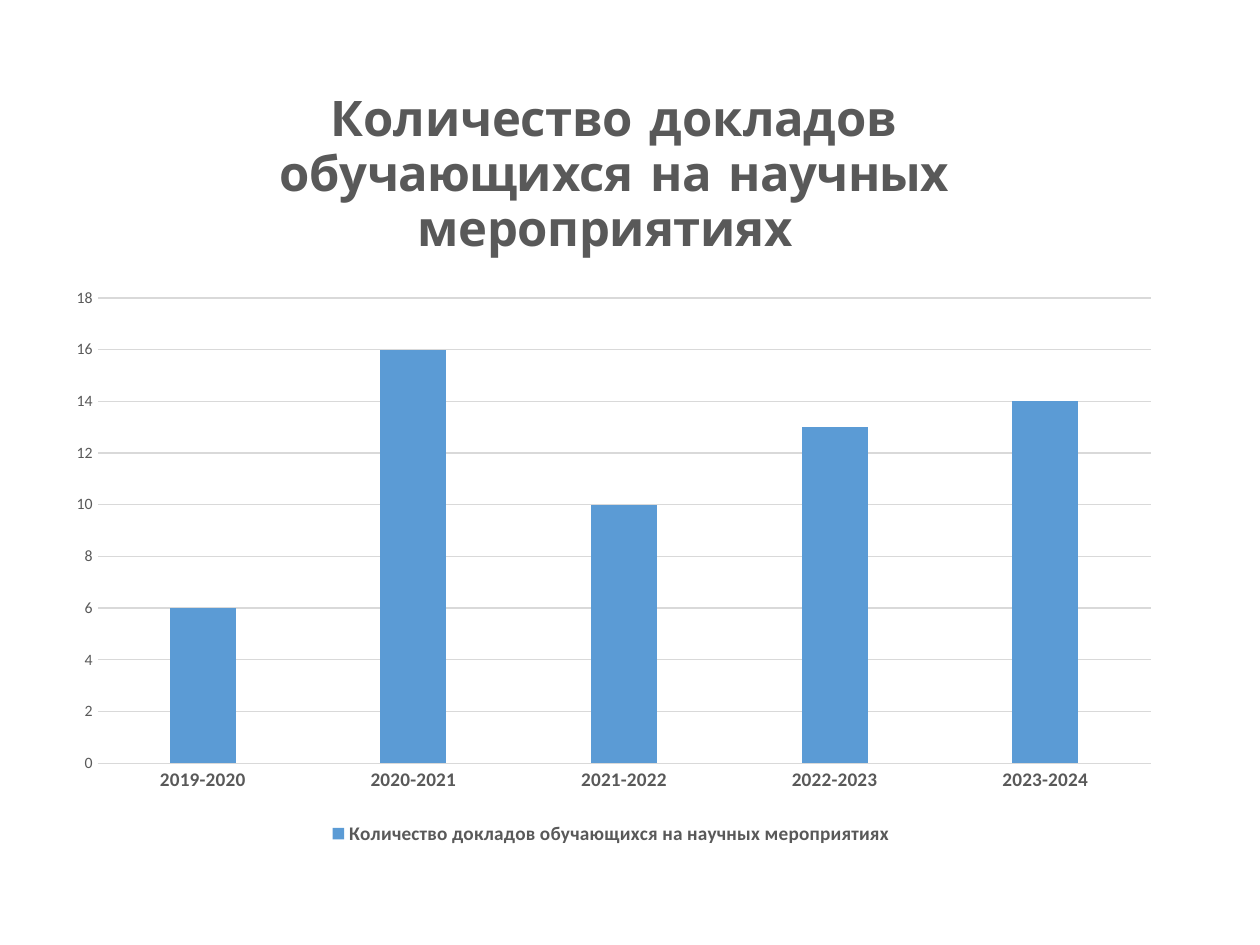
from pptx import Presentation
from pptx.chart.data import CategoryChartData
from pptx.dml.color import RGBColor
from pptx.enum.chart import XL_CHART_TYPE, XL_LEGEND_POSITION, XL_TICK_MARK
from pptx.util import Inches, Pt

COLORS = {"text": "595959", "grid": "D9D9D9", "bar": "5B9BD5", "base": "000000"}
HEADING = "Количество докладов обучающихся на научных мероприятиях "
REPORTS = {
    "2019-2020": 6,
    "2020-2021": 16,
    "2021-2022": 10,
    "2022-2023": 13,
    "2023-2024": 14,
}


def color(name):
    """Return the palette colour with the given name."""
    return RGBColor.from_string(COLORS[name])


def style_font(font, size, bold=False, face="Calibri", tone="text"):
    """Set the face, size, weight and colour of a font."""
    font.name = face
    font.size = Pt(size)
    font.bold = bold
    font.color.rgb = color(tone)


def style_line(line):
    """Make a line thin and light grey."""
    line.color.rgb = color("grid")
    line.width = Pt(0.75)


def style_title(chart):
    """Put the heading above the plot."""
    title = chart.chart_title
    title.include_in_layout = False
    heading = title.text_frame.paragraphs[0]
    heading.text = HEADING
    for font in (heading.font, heading.runs[0].font):
        style_font(font, 28, bold=True, face="Comic Neue")


def style_axes(chart):
    """Format the year axis, the count axis and the gridlines."""
    years, counts = chart.category_axis, chart.value_axis
    for axis in (years, counts):
        axis.major_tick_mark = XL_TICK_MARK.NONE
        axis.minor_tick_mark = XL_TICK_MARK.NONE
    style_font(years.tick_labels.font, 11, bold=True)
    style_line(years.format.line)
    style_font(counts.tick_labels.font, 9)
    counts.format.line.fill.background()
    counts.has_major_gridlines = True
    style_line(counts.major_gridlines.format.line)


def style_legend(chart):
    """Show the legend below the plot."""
    chart.has_legend = True
    chart.legend.position = XL_LEGEND_POSITION.BOTTOM
    chart.legend.include_in_layout = False
    style_font(chart.legend.font, 11, bold=True)


def add_reports_chart(slide, left, top, width, height):
    """Place the column chart of reports per academic year in the box."""
    data = CategoryChartData()
    data.categories = list(REPORTS)
    data.add_series(HEADING, list(REPORTS.values()))
    chart = slide.shapes.add_chart(
        XL_CHART_TYPE.COLUMN_CLUSTERED, left, top, width, height, data
    ).chart
    style_font(chart.font, 10, tone="base")
    style_title(chart)
    style_axes(chart)
    style_legend(chart)
    columns = chart.plots[0]
    columns.vary_by_categories = False
    columns.gap_width = 219
    columns.overlap = -27
    bars = columns.series[0].format
    bars.fill.solid()
    bars.fill.fore_color.rgb = color("bar")


def main():
    """Build and save the presentation."""
    deck = Presentation()
    deck.slide_width, deck.slide_height = Inches(10), Inches(7.5)
    slide = deck.slides.add_slide(deck.slide_layouts[6])
    add_reports_chart(slide, Inches(0.43), Inches(0.44), Inches(8.88), Inches(6.31))
    deck.save("out.pptx")


if __name__ == "__main__":
    main()
